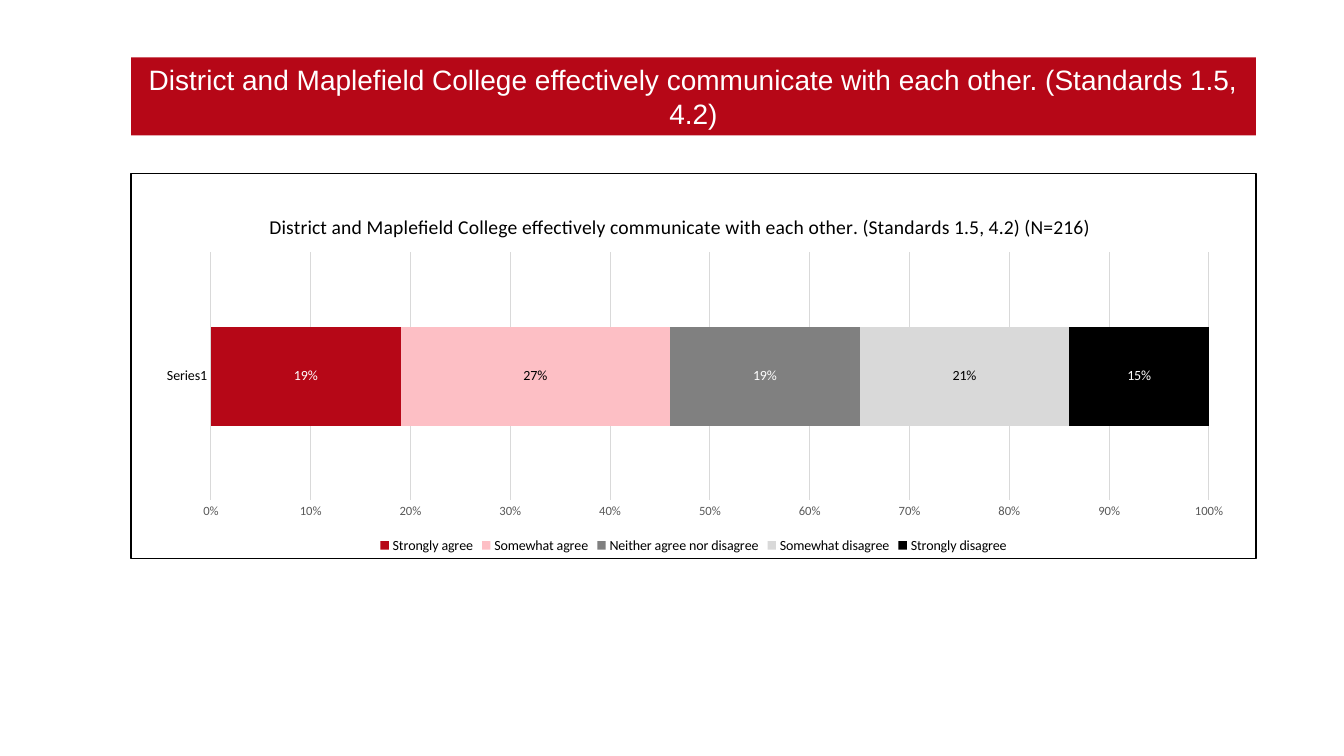
"""Build a survey slide with a title band and a framed stacked bar chart."""
from lxml import etree
from pptx import Presentation
from pptx.chart.data import CategoryChartData
from pptx.dml.color import RGBColor
from pptx.enum.chart import XL_CHART_TYPE, XL_LABEL_POSITION, XL_LEGEND_POSITION, XL_TICK_MARK
from pptx.enum.shapes import MSO_SHAPE
from pptx.enum.text import MSO_ANCHOR, PP_ALIGN
from pptx.oxml.ns import qn
from pptx.util import Pt

BAR_STACKED = XL_CHART_TYPE.BAR_STACKED
CENTER_LABEL = XL_LABEL_POSITION.CENTER
LEGEND_BOTTOM = XL_LEGEND_POSITION.BOTTOM
NO_TICK = XL_TICK_MARK.NONE
RECTANGLE = MSO_SHAPE.RECTANGLE
MIDDLE = MSO_ANCHOR.MIDDLE
CENTER = PP_ALIGN.CENTER

RED = RGBColor(0xB6, 0x07, 0x17)
PINK = RGBColor(0xFD, 0xBF, 0xC5)
GRAY = RGBColor(0x80, 0x80, 0x80)
LIGHT_GRAY = RGBColor(0xD9, 0xD9, 0xD9)
DARK_GRAY = RGBColor(0x59, 0x59, 0x59)
BLACK = RGBColor(0, 0, 0)
WHITE = RGBColor(0xFF, 0xFF, 0xFF)

STATEMENT = "District and Maplefield College effectively communicate with each other. (Standards 1.5, 4.2)"
ANSWERS = [
    ("Strongly agree", 0.19, RED, WHITE),
    ("Somewhat agree", 0.27, PINK, BLACK),
    ("Neither agree nor disagree", 0.19, GRAY, WHITE),
    ("Somewhat disagree", 0.21, LIGHT_GRAY, BLACK),
    ("Strongly disagree", 0.15, BLACK, WHITE),
]
LEFT, WIDTH = Pt(93.6), Pt(803.5)


def set_font(font, size, color, name="Calibri"):
    font.name = name
    font.size = Pt(size)
    font.bold = False
    font.color.rgb = color


def set_layout(parent, index, settings):
    for old in parent.findall(qn("c:layout")):
        parent.remove(old)
    layout = etree.Element(qn("c:layout"))
    manual = etree.SubElement(layout, qn("c:manualLayout"))
    for tag, value in settings.items():
        etree.SubElement(manual, qn(f"c:{tag}")).set("val", str(value))
    parent.insert(index, layout)


prs = Presentation()
prs.slide_width, prs.slide_height = Pt(960), Pt(540)
s = prs.slides.add_slide(prs.slide_layouts[5])

title = s.shapes.title
title.left, title.top, title.width, title.height = LEFT, Pt(41), WIDTH, Pt(55.7)
title.fill.solid()
title.fill.fore_color.rgb = RED
tf = title.text_frame
tf.text = STATEMENT
tf.word_wrap = True
tf.vertical_anchor = MIDDLE
p = tf.paragraphs[0]
p.alignment = CENTER
set_font(p.runs[0].font, 20, WHITE, "Arial")

frame = s.shapes.add_shape(RECTANGLE, LEFT, Pt(123.8), WIDTH, Pt(275.3))
frame.shadow.inherit = False
frame.fill.background()
frame.line.color.rgb = BLACK
frame.line.width = Pt(1)

data = CategoryChartData(number_format="0%")
data.categories = ["Series1"]
for name, share, fill, ink in ANSWERS:
    data.add_series(name, [share])
chart = s.shapes.add_chart(BAR_STACKED, Pt(103.7), Pt(141.8), Pt(783.4), Pt(256.3), data).chart
set_font(chart.font, 10, BLACK)

chart.has_title = True
tf = chart.chart_title.text_frame
tf.text = f"{STATEMENT} (N=216)"
set_font(tf.paragraphs[0].runs[0].font, 14, BLACK)
set_layout(chart.chart_title._element, 1,
           {"xMode": "edge", "yMode": "edge", "x": 0.11, "y": 0.03})

chart.has_legend = True
chart.legend.position = LEGEND_BOTTOM
chart.legend.include_in_layout = False
set_font(chart.legend.font, 10, BLACK)

plot = chart.plots[0]
plot.gap_width = 150
plot.overlap = 100
plot.vary_by_categories = False
for series, (name, share, fill, ink) in zip(plot.series, ANSWERS):
    series.format.fill.solid()
    series.format.fill.fore_color.rgb = fill
    labels = series.data_labels
    labels.show_value = True
    labels.number_format = "0%"
    labels.number_format_is_linked = False
    labels.position = CENTER_LABEL
    set_font(labels.font, 10, ink)

cat_axis, val_axis = chart.category_axis, chart.value_axis
for axis, size, color in ((cat_axis, 10, BLACK), (val_axis, 9, DARK_GRAY)):
    axis.major_tick_mark = axis.minor_tick_mark = NO_TICK
    set_font(axis.tick_labels.font, size, color)
cat_axis.has_major_gridlines = False
val_axis.has_major_gridlines = True
for line in (cat_axis.format.line, val_axis.major_gridlines.format.line):
    line.color.rgb = LIGHT_GRAY
    line.width = Pt(0.75)
val_axis.format.line.fill.background()
val_axis.minimum_scale, val_axis.maximum_scale, val_axis.major_unit = 0, 1, 0.1
val_axis.tick_labels.number_format = "0%"
val_axis.tick_labels.number_format_is_linked = False
set_layout(plot._element.getparent(), 0,
           {"layoutTarget": "inner", "xMode": "edge", "yMode": "edge",
            "x": 0.06, "y": 0.15, "w": 0.91, "h": 0.69})

prs.save("out.pptx")
